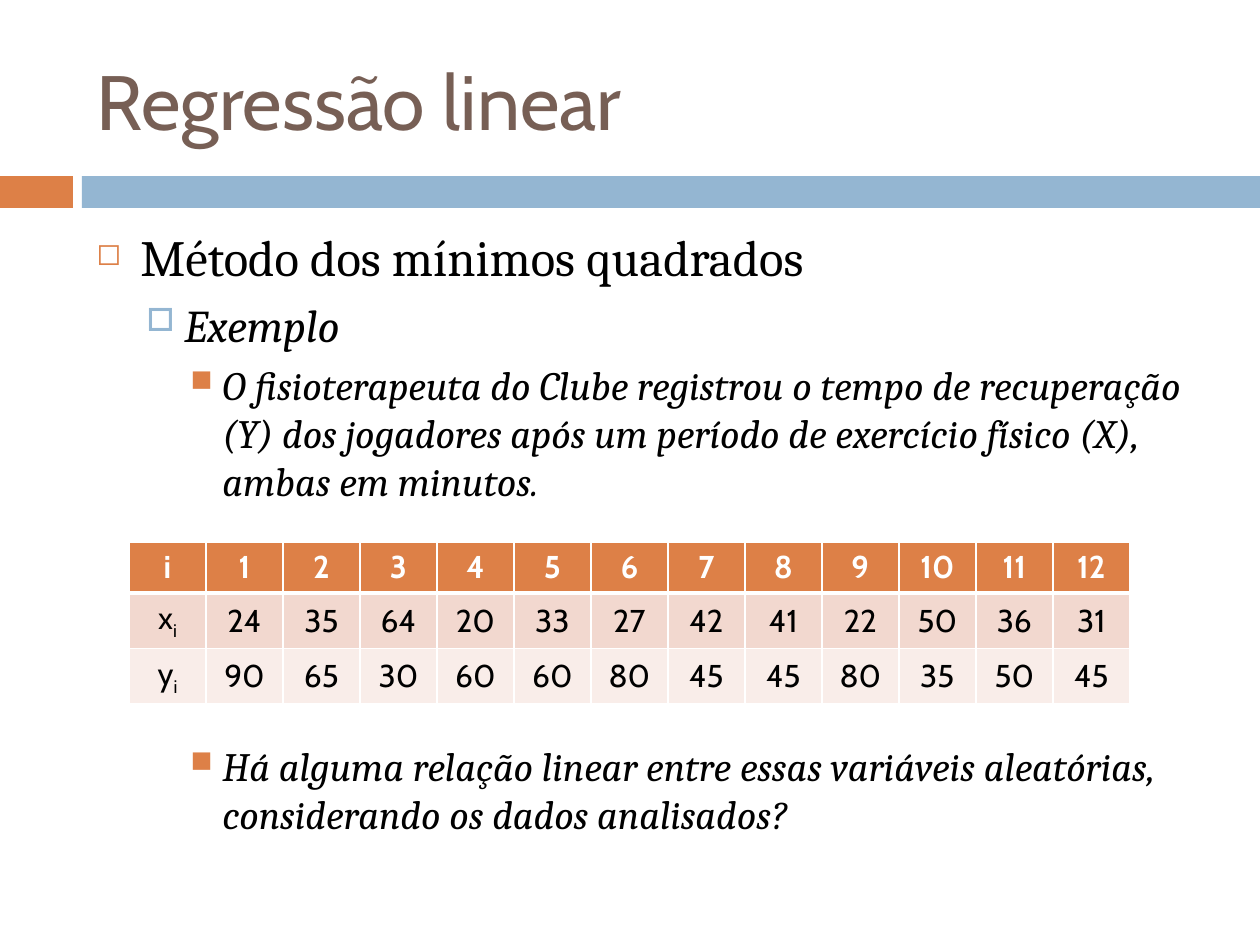
from dataclasses import dataclass

from lxml.etree import SubElement
from pptx import Presentation
from pptx.dml.color import RGBColor
from pptx.enum.shapes import MSO_SHAPE
from pptx.enum.text import MSO_ANCHOR, PP_ALIGN
from pptx.oxml import parse_xml
from pptx.oxml.ns import nsdecls, qn
from pptx.util import Emu, Pt

PX_PER_INCH = 126
ORANGE, BLUE, BROWN = "DD8047", "94B6D2", "775F55"
BLACK, WHITE = "000000", "FFFFFF"
HEADING_FONT, BODY_FONT = "Cabin", "Cambria"


@dataclass(frozen=True)
class Bar:
    left: int
    width: int
    color: str


@dataclass(frozen=True)
class Level:
    margin: int
    hanging: int
    size: int
    bullet: str
    bullet_color: str
    bullet_pct: int
    italic: bool = True


@dataclass(frozen=True)
class Item:
    text: str
    level: int
    before: float


@dataclass(frozen=True)
class Row:
    label: str
    subscript: str
    values: tuple[int, ...]
    fill: str
    color: str = BLACK
    bold: bool = False


BARS = (Bar(0, 73, ORANGE), Bar(82, 1178, BLUE))

LEVELS = (
    Level(44, 44, 29, "◻", ORANGE, 60, italic=False),
    Level(88, 38, 26, "□", BLUE, 70),
    Level(126, 32, 23, "■", ORANGE, 75),
)

# The last item leaves room for the table above it.
ITEMS = (
    Item("Método dos mínimos quadrados", 0, 7),
    Item("Exemplo", 1, 5.5),
    Item("O fisioterapeuta do Clube registrou o tempo de recuperação (Y) dos "
         "jogadores após um período de exercício físico (X), ambas em minutos.", 2, 5),
    Item("Há alguma relação linear entre essas variáveis aleatórias, "
         "considerando os dados analisados?", 2, 135),
)

ROWS = (
    Row("i", "", tuple(range(1, 13)), ORANGE, WHITE, bold=True),
    Row("x", "i", (24, 35, 64, 20, 33, 27, 42, 41, 22, 50, 36, 31), "F2D8CF"),
    Row("y", "i", (90, 65, 30, 60, 60, 80, 45, 45, 80, 35, 50, 45), "F9EDE9"),
)


def px(n: int) -> Emu:
    return Emu(round(n * 914400 / PX_PER_INCH))


def rgb(color: str) -> RGBColor:
    return RGBColor.from_string(color)


def add_run(p, text: str, size: int, font: str, color: str,
            bold: bool = False, italic: bool = False):
    r = p.add_run()
    r.text = text
    r.font.size, r.font.name = Pt(size), font
    r.font.bold, r.font.italic = bold, italic
    r.font.color.rgb = rgb(color)
    return r


def add_bar(s, bar: Bar) -> None:
    sp = s.shapes.add_shape(MSO_SHAPE.RECTANGLE, px(bar.left), px(176), px(bar.width), px(32))
    sp.shadow.inherit = False
    sp.fill.solid()
    sp.fill.fore_color.rgb = rgb(bar.color)
    sp.line.fill.background()


def add_text_frame(s, top: int, height: int, anchor: MSO_ANCHOR):
    tf = s.shapes.add_textbox(px(84), px(top), px(1124), px(height)).text_frame
    tf.word_wrap = True
    tf.vertical_anchor = anchor
    return tf


def set_bullet(p, level: Level) -> None:
    pPr = p._p.get_or_add_pPr()
    pPr.set("marL", str(px(level.margin)))
    pPr.set("indent", str(-px(level.hanging)))
    color = SubElement(pPr, qn("a:buClr"))
    SubElement(color, qn("a:srgbClr"), val=level.bullet_color)
    SubElement(pPr, qn("a:buSzPct"), val=str(level.bullet_pct * 1000))
    SubElement(pPr, qn("a:buChar"), char=level.bullet)


def add_item(p, item: Item) -> None:
    level = LEVELS[item.level]
    p.level = item.level
    p.space_before = Pt(item.before)
    set_bullet(p, level)
    add_run(p, item.text, level.size, BODY_FONT, BLACK, italic=level.italic)


def set_borders(cell, top: int, bottom: int) -> None:
    """Draw white borders; the widths of the top and bottom are in points."""
    tcPr = cell._tc.get_or_add_tcPr()
    sides = (("lnL", 1), ("lnR", 1), ("lnT", top), ("lnB", bottom))
    for i, (side, width) in enumerate(sides):
        tcPr.insert(i, parse_xml(
            f'<a:{side} {nsdecls("a")} w="{Pt(width)}"><a:solidFill>'
            f'<a:srgbClr val="{WHITE}"/></a:solidFill></a:{side}>'))


def fill_cell(cell, row: Row, text: str, subscript: str = "") -> None:
    cell.fill.solid()
    cell.fill.fore_color.rgb = rgb(row.fill)
    cell.vertical_anchor = MSO_ANCHOR.MIDDLE
    p = cell.text_frame.paragraphs[0]
    p.alignment = PP_ALIGN.CENTER
    add_run(p, text, 18, HEADING_FONT, row.color, row.bold)
    if subscript:
        r = add_run(p, subscript, 18, HEADING_FONT, row.color, row.bold)
        r._r.get_or_add_rPr().set("baseline", "-25000")


def add_data_table(s, rows: tuple[Row, ...]) -> None:
    cols, col_width, row_height = len(rows[0].values) + 1, 77, 51
    table = s.shapes.add_table(len(rows), cols, px(129), px(542),
                               px(cols * col_width), px(len(rows) * row_height)).table
    for col in table.columns:
        col.width = px(col_width)
    for i, row in enumerate(rows):
        table.rows[i].height = px(row_height)
        for j, text in enumerate((row.label, *map(str, row.values))):
            cell = table.cell(i, j)
            fill_cell(cell, row, text, row.subscript if j == 0 else "")
            set_borders(cell, top=3 if i == 1 else 1, bottom=3 if i == 0 else 1)


def main() -> None:
    prs = Presentation()
    prs.slide_width, prs.slide_height = px(1260), px(945)
    s = prs.slides.add_slide(prs.slide_layouts[6])

    for bar in BARS:
        add_bar(s, bar)

    title = add_text_frame(s, 32, 136, MSO_ANCHOR.MIDDLE)
    add_run(title.paragraphs[0], "Regressão linear", 44, HEADING_FONT, BROWN)

    body = add_text_frame(s, 220, 659, MSO_ANCHOR.TOP)
    for i, item in enumerate(ITEMS):
        add_item(body.add_paragraph() if i else body.paragraphs[0], item)

    add_data_table(s, ROWS)
    prs.save("out.pptx")


if __name__ == "__main__":
    main()
